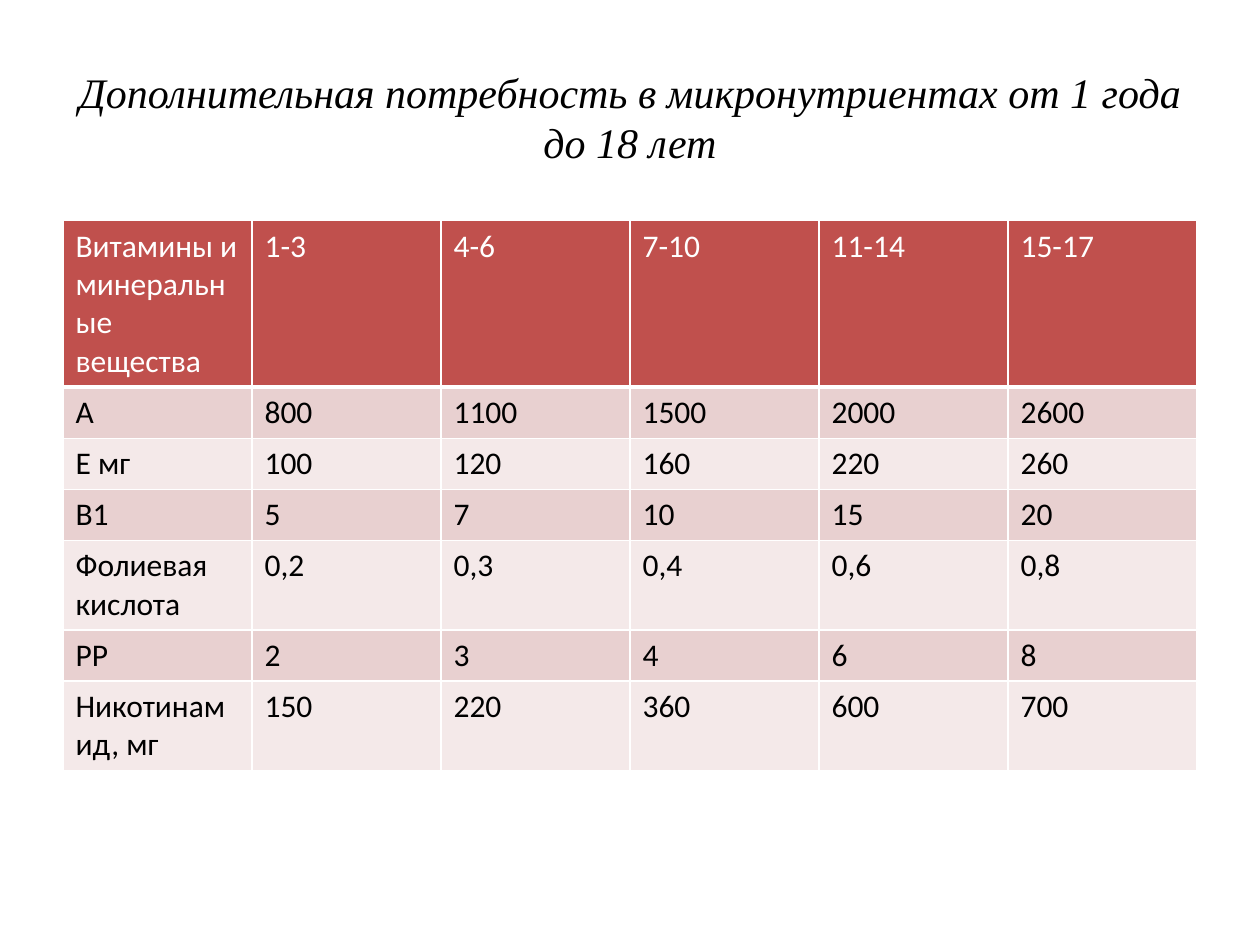
"""Builds a slide with a table of children's additional micronutrient needs by age."""
from dataclasses import dataclass

from lxml import etree
from pptx import Presentation
from pptx.dml.color import RGBColor
from pptx.enum.text import MSO_ANCHOR, PP_ALIGN
from pptx.oxml.ns import qn
from pptx.util import Cm, Pt

CENTER = PP_ALIGN.CENTER
MIDDLE = MSO_ANCHOR.MIDDLE

TITLE = "Дополнительная потребность в микронутриентах от 1 года до 18 лет"
ROWS = [
    ("Витамины и минеральные вещества", "1-3", "4-6", "7-10", "11-14", "15-17"),
    ("А", "800", "1100", "1500", "2000", "2600"),
    ("Е мг", "100", "120", "160", "220", "260"),
    ("B1", "5", "7", "10", "15", "20"),
    ("Фолиевая кислота", "0,2", "0,3", "0,4", "0,6", "0,8"),
    ("PP", "2", "3", "4", "6", "8"),
    ("Никотинамид, мг", "150", "220", "360", "600", "700"),
]


@dataclass(frozen=True)
class Theme:
    title_font: str = "Times New Roman"
    table_font: str = "Calibri"
    title_size: int = 24
    table_size: int = 18
    text: str = "000000"
    header_text: str = "FFFFFF"
    header: str = "C0504D"
    bands: tuple = ("E8D0D0", "F4E9E9")
    border: str = "FFFFFF"
    border_width: int = 1
    header_rule: int = 3


THEME = Theme()
LEFT, WIDTH = Cm(1.27), Cm(22.86)
TITLE_TOP, TITLE_HEIGHT = Cm(0.76), Cm(3.18)
TABLE_TOP, ROW_HEIGHT = Cm(4.45), Cm(1.03)


def set_font(p, name, size, color):
    p.font.name = name
    p.font.size = Pt(size)
    p.font.bold = False
    p.font.color.rgb = RGBColor.from_string(color)


def set_borders(cell, bottom):
    tcPr = cell._tc.get_or_add_tcPr()
    widths = {"lnL": THEME.border_width, "lnR": THEME.border_width,
              "lnT": THEME.border_width, "lnB": bottom}
    for tag, width in widths.items():
        ln = etree.SubElement(tcPr, qn(f"a:{tag}"), w=str(Pt(width)))
        fill = etree.SubElement(ln, qn("a:solidFill"))
        etree.SubElement(fill, qn("a:srgbClr"), val=THEME.border)


def add_title(s):
    title = s.shapes.title
    title.left, title.top, title.width, title.height = LEFT, TITLE_TOP, WIDTH, TITLE_HEIGHT
    tf = title.text_frame
    tf.text = TITLE
    tf.word_wrap = True
    tf.vertical_anchor = MIDDLE
    p = tf.paragraphs[0]
    p.alignment = CENTER
    set_font(p, THEME.title_font, THEME.title_size, THEME.text)
    p.font.italic = True


def add_needs_table(s):
    table = s.shapes.add_table(len(ROWS), len(ROWS[0]), LEFT, TABLE_TOP,
                               WIDTH, ROW_HEIGHT * len(ROWS)).table
    for i, row in enumerate(ROWS):
        is_header = i == 0
        fill = THEME.header if is_header else THEME.bands[(i - 1) % 2]
        color = THEME.header_text if is_header else THEME.text
        bottom = THEME.header_rule if is_header else THEME.border_width
        for j, text in enumerate(row):
            cell = table.cell(i, j)
            cell.text = text
            set_font(cell.text_frame.paragraphs[0], THEME.table_font, THEME.table_size, color)
            set_borders(cell, bottom)
            cell.fill.solid()
            cell.fill.fore_color.rgb = RGBColor.from_string(fill)


def main():
    prs = Presentation()
    prs.slide_width, prs.slide_height = Cm(25.4), Cm(19.05)
    s = prs.slides.add_slide(prs.slide_layouts[5])
    add_title(s)
    add_needs_table(s)
    prs.save("out.pptx")


if __name__ == "__main__":
    main()
